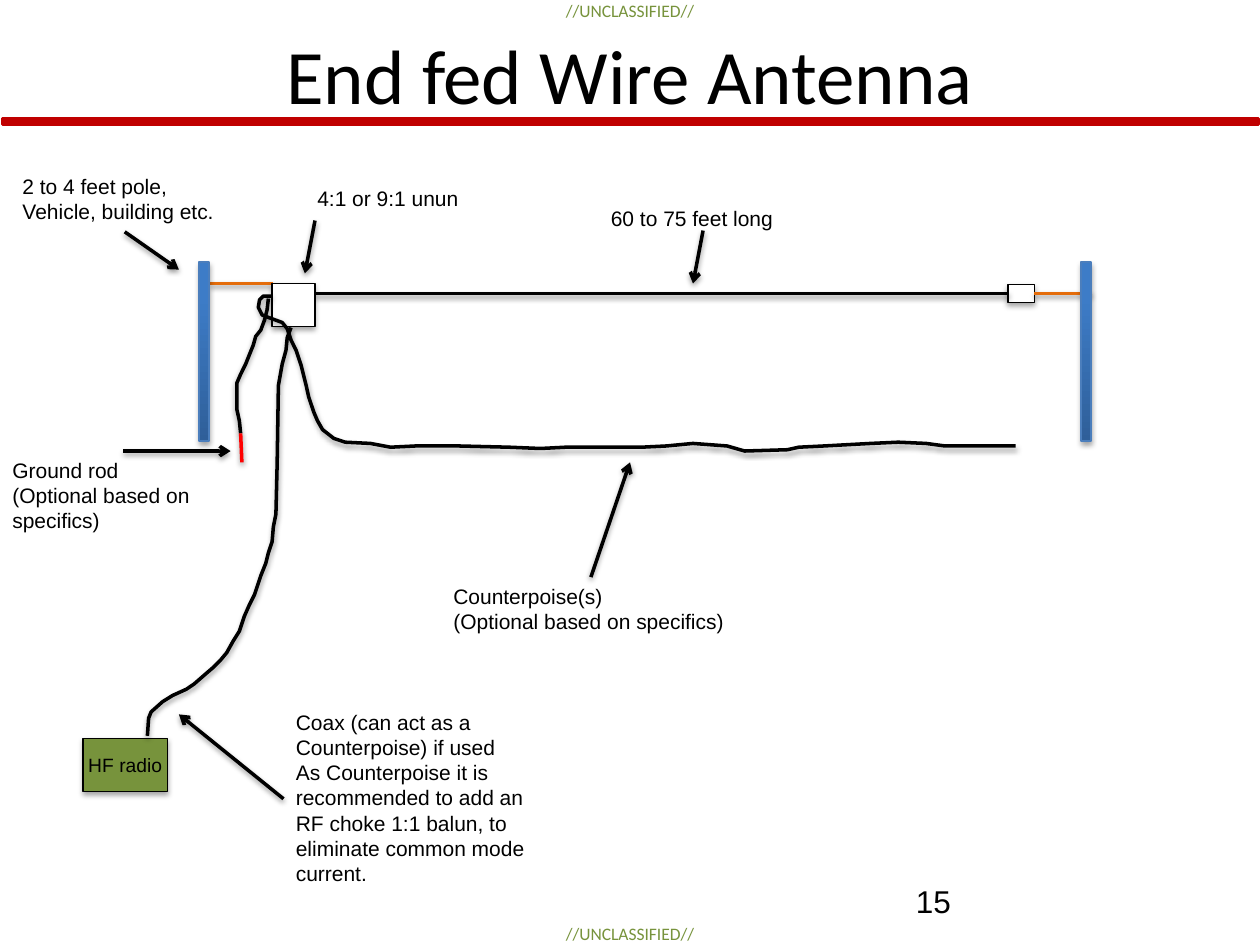
import pptx
import pptx.util
import pptx.dml.color
import pptx.enum.shapes
import pptx.enum.text
import lxml.etree

Inches, Pt = pptx.util.Inches, pptx.util.Pt
KIND = pptx.enum.shapes.MSO_SHAPE
ALIGN = pptx.enum.text.PP_ALIGN
ANCHOR = pptx.enum.text.MSO_ANCHOR
NS = "http://schemas.openxmlformats.org/drawingml/2006/main"

HUES = {"black": "000000", "white": "FFFFFF", "bar": "C00000", "green": "77933C",
        "rope": "E46C0A", "rod": "FF0000", "edge": "4B7EBC",
        "dark": "2F5F99", "light": "3D7CC7"}

MARK = "//UNCLASSIFIED//"
MARK_TOPS = [-0.05, 7.28]
TITLE = "End fed Wire Antenna"
PAGE = "15"

# left, top, width, height, wrap, lines
LABELS = [
    (0.08, 1.33, 1.82, 0.5, False, ["2 to 4 feet pole,", "Vehicle, building etc."]),
    (2.42, 1.42, 1.33, 0.3, False, ["4:1 or 9:1 unun"]),
    (4.75, 1.58, 1.5, 0.3, False, ["60 to 75 feet long"]),
    (0, 3.58, 1.96, 0.71, True, ["Ground rod", "(Optional based on specifics)"]),
    (3.5, 4.58, 2.37, 0.5, False, ["Counterpoise(s)", "(Optional based on specifics)"]),
    (2.25, 5.58, 2.03, 1.51, False,
     ["Coax (can act as a", "Counterpoise) if used", "As Counterpoise it is",
      "recommended to add an", "RF choke 1:1 balun, to", "eliminate common mode",
      "current."]),
]
# from, to
ARROWS = [
    ((0.99, 1.84), (1.42, 2.14)),
    ((2.5, 1.75), (2.42, 2.17)),
    ((5.58, 1.83), (5.5, 2.25)),
    ((0.98, 3.58), (1.83, 3.58)),
    ((4.69, 4.58), (5, 3.67)),
    ((2.25, 6.34), (1.42, 5.67)),
]
POLES = [1.58, 8.58]
COAX = [(2.31, 2.6), (2.28, 2.68), (2.27, 2.78), (2.24, 2.89), (2.21, 3.06),
        (2.2, 3.68), (2.19, 4.08), (2.17, 4.18), (2.16, 4.3), (2.13, 4.39),
        (2.11, 4.47), (2.07, 4.57), (2.04, 4.66), (2.02, 4.72), (1.98, 4.8),
        (1.94, 4.89), (1.9, 5.01), (1.85, 5.09), (1.8, 5.18), (1.75, 5.24),
        (1.69, 5.3), (1.62, 5.36), (1.54, 5.43), (1.48, 5.47), (1.37, 5.52),
        (1.29, 5.57), (1.2, 5.65), (1.18, 5.7), (1.17, 5.84)]
COUNTER = [(2.15, 2.35), (2.09, 2.35), (2.06, 2.38), (2.05, 2.44), (2.08, 2.5),
           (2.13, 2.52), (2.24, 2.56), (2.28, 2.61), (2.31, 2.7), (2.35, 2.78),
           (2.39, 2.9), (2.43, 3.06), (2.45, 3.15), (2.49, 3.27), (2.52, 3.34),
           (2.56, 3.41), (2.65, 3.48), (2.74, 3.51), (2.94, 3.52), (3.1, 3.55),
           (3.3, 3.54), (3.64, 3.54), (4.04, 3.55), (4.29, 3.56), (4.49, 3.55),
           (5.09, 3.55), (5.29, 3.54), (5.5, 3.52), (5.77, 3.54), (5.91, 3.58),
           (6.25, 3.57), (6.34, 3.55), (6.54, 3.54), (6.91, 3.52), (7.13, 3.51),
           (7.35, 3.52), (7.5, 3.54), (8.06, 3.54)]
GROUND = [(2.13, 2.37), (2.12, 2.46), (2.1, 2.54), (2.07, 2.62), (2.03, 2.67),
          (2.01, 2.74), (1.97, 2.84), (1.95, 2.89), (1.91, 2.97), (1.88, 3.04),
          (1.88, 3.25), (1.9, 3.34), (1.91, 3.44)]

deck = pptx.Presentation()
deck.slide_width, deck.slide_height = Inches(10), Inches(7.5)
shapes = deck.slides.add_slide(deck.slide_layouts[6]).shapes


def hue(name):
    return pptx.dml.color.RGBColor.from_string(HUES[name])


def shade(item, alpha, dist):
    """Give a soft black shadow straight below the item."""
    item._element.spPr.append(lxml.etree.fromstring(
        f'<a:effectLst xmlns:a="{NS}"><a:outerShdw blurRad="{Pt(3.1)}" '
        f'dist="{Pt(dist)}" dir="5400000" rotWithShape="0"><a:srgbClr val="000000">'
        f'<a:alpha val="{alpha * 1000}"/></a:srgbClr></a:outerShdw></a:effectLst>'))


def stroke(item, color, width):
    item.line.color.rgb = hue(color)
    item.line.width = Pt(width)


def write(item, lines, size, font="Arial", color="black", align=ALIGN.LEFT,
          anchor=ANCHOR.TOP, wrap=True):
    frame = item.text_frame
    frame.text = "\n".join(lines)
    frame.word_wrap = wrap
    frame.vertical_anchor = anchor
    for para in frame.paragraphs:
        para.alignment = align
        for run in para.runs:
            run.font.size = Pt(size)
            run.font.name = font
            run.font.color.rgb = hue(color)


def text(left, top, width, height, *args, **style):
    area = map(Inches, (left, top, width, height))
    write(shapes.add_textbox(*area), *args, **style)


def block(left, top, width, height, fill, edge="black", kind=KIND.RECTANGLE, thick=0.75):
    item = shapes.add_shape(kind, *map(Inches, (left, top, width, height)))
    item.shadow.inherit = False
    item.fill.solid()
    item.fill.fore_color.rgb = hue(fill)
    stroke(item, edge, thick)
    return item


def cast(item):
    """Swap the empty effect list of a block for a shadow."""
    spot = item._element.spPr
    spot.remove(spot.find(f"{{{NS}}}effectLst"))
    shade(item, 35, 1.8)
    return item


def wire(start, end, color="black", arrow=False):
    ends = map(Inches, (*start, *end))
    item = shapes.add_connector(pptx.enum.shapes.MSO_CONNECTOR.STRAIGHT, *ends)
    stroke(item, color, 2)
    if arrow:
        lxml.etree.SubElement(item.line._get_or_add_ln(), f"{{{NS}}}tailEnd", type="arrow")
    shade(item, 38, 1.6)
    return item


def cable(points):
    spots = [(Inches(x), Inches(y)) for x, y in points]
    draft = shapes.build_freeform(*spots[0], scale=1)
    draft.add_line_segments(spots[1:], close=False)
    item = draft.convert_to_shape()
    item.fill.background()
    stroke(item, "black", 2)
    shade(item, 38, 1.6)


block(0.02, 0.94, 9.97, 0.05, "bar", "bar", thick=1.5)
for top in MARK_TOPS:
    text(4.29, top, 1.42, 0.27, [MARK], 10, "Calibri", "green", ALIGN.CENTER)
text(0.5, 0.17, 9, 0.83, [TITLE], 44, "Calibri",
     align=ALIGN.CENTER, anchor=ANCHOR.MIDDLE)
text(7.17, 6.95, 2.33, 0.4, [PAGE], 18, anchor=ANCHOR.MIDDLE)

radio = cast(block(0.66, 5.86, 0.67, 0.42, "green"))
write(radio, ["HF radio"], 11, align=ALIGN.CENTER, anchor=ANCHOR.MIDDLE, wrap=False)
tip = cast(block(8, 2.26, 0.21, 0.14, "white"))
wire((2.5, 2.33), (8, 2.33)).end_connect(tip, 1)
wire((8.67, 2.33), (8.21, 2.33), "rope").end_connect(tip, 3)
wire((2.17, 2.25), (1.67, 2.25), "rope")

for left in POLES:
    pole = cast(block(left, 2.08, 0.08, 1.42, "dark", "edge", KIND.FLOWCHART_PROCESS))
    pole.fill.gradient()
    pole.fill.gradient_angle = 90
    for stop, (color, place) in zip(pole.fill.gradient_stops, [("dark", 0), ("light", 0.8)]):
        stop.color.rgb = hue(color)
        stop.position = place

cast(block(2.16, 2.25, 0.34, 0.34, "white"))
for points in (COAX, COUNTER, GROUND):
    cable(points)
wire(GROUND[-1], (1.92, 3.67), "rod")

for left, top, width, height, wrap, lines in LABELS:
    text(left, top, width, height, lines, 12, wrap=wrap)
for start, end in ARROWS:
    wire(start, end, arrow=True)

deck.save("out.pptx")
